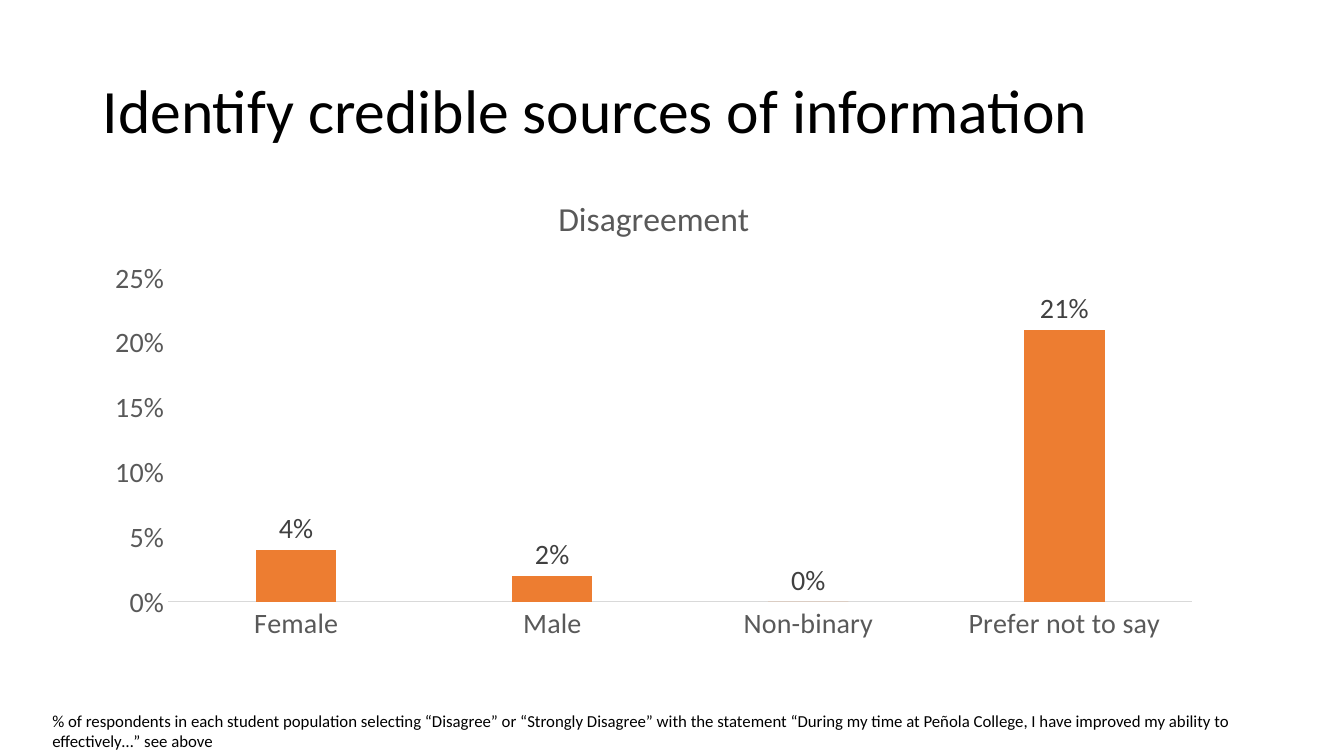
"""Builds the slide on disagreement with identifying credible sources."""
from pptx import Presentation
from pptx.chart.data import CategoryChartData
from pptx.dml.color import RGBColor
from pptx.enum.chart import XL_CHART_TYPE, XL_LABEL_POSITION, XL_TICK_MARK
from pptx.enum.text import MSO_ANCHOR
from pptx.util import Inches, Pt

COLUMNS = XL_CHART_TYPE.COLUMN_CLUSTERED
OUTSIDE_END = XL_LABEL_POSITION.OUTSIDE_END
NO_TICK = XL_TICK_MARK.NONE
TOP, MIDDLE = MSO_ANCHOR.TOP, MSO_ANCHOR.MIDDLE

BLACK = RGBColor(0x00, 0x00, 0x00)
DARK_GRAY = RGBColor(0x40, 0x40, 0x40)
GRAY = RGBColor(0x59, 0x59, 0x59)
LIGHT_GRAY = RGBColor(0xD9, 0xD9, 0xD9)
ORANGE = RGBColor(0xED, 0x7D, 0x31)


class SlideBuilder:
    """Holds the style and the current slide."""

    font_name = "Calibri"
    percent = "0%"

    def __init__(self, deck):
        self.slide = deck.slides.add_slide(deck.slide_layouts[6])

    def style(self, font, size, color):
        font.name = self.font_name
        font.size = Pt(size)
        font.bold = False
        font.color.rgb = color

    def text(self, box, words, size, anchor=TOP, spacing=1.0):
        frame = self.slide.shapes.add_textbox(*map(Inches, box)).text_frame
        frame.word_wrap = True
        frame.vertical_anchor = anchor
        paragraph = frame.paragraphs[0]
        paragraph.text = words
        paragraph.line_spacing = spacing
        self.style(paragraph.font, size, BLACK)

    def column_chart(self, box, title, shares):
        data = CategoryChartData(number_format=self.percent)
        data.categories = list(shares)
        data.add_series(title, list(shares.values()))
        chart = self.slide.shapes.add_chart(COLUMNS, *map(Inches, box), data).chart
        self.style(chart.font, 20, BLACK)
        chart.has_legend = False
        chart.has_title = True
        heading = chart.chart_title.text_frame
        heading.text = title
        self.style(heading.paragraphs[0].font, 24, GRAY)

        for axis in (chart.category_axis, chart.value_axis):
            axis.major_tick_mark = axis.minor_tick_mark = NO_TICK
            axis.has_major_gridlines = False
            self.style(axis.tick_labels.font, 20, GRAY)
        baseline = chart.category_axis.format.line
        baseline.color.rgb = LIGHT_GRAY
        baseline.width = Pt(0.75)
        scale = chart.value_axis
        scale.format.line.fill.background()
        scale.minimum_scale, scale.maximum_scale, scale.major_unit = 0, 0.25, 0.05
        scale.tick_labels.number_format = self.percent
        scale.tick_labels.number_format_is_linked = False

        plot = chart.plots[0]
        plot.gap_width, plot.overlap = 219, -27
        plot.vary_by_categories = False
        columns = plot.series[0]
        columns.format.fill.solid()
        columns.format.fill.fore_color.rgb = ORANGE
        labels = columns.data_labels
        labels.show_value = True
        labels.position = OUTSIDE_END
        labels.number_format = self.percent
        labels.number_format_is_linked = False
        self.style(labels.font, 20, DARK_GRAY)


def main():
    deck = Presentation()
    deck.slide_width, deck.slide_height = Inches(13.33), Inches(7.5)
    builder = SlideBuilder(deck)
    builder.text((0.92, 0.4, 11.5, 1.45), "Identify credible sources of information",
                 44, MIDDLE, 0.9)
    builder.text((0.42, 7, 12.49, 0.5),
                 "% of respondents in each student population selecting “Disagree” or "
                 "“Strongly Disagree” with the statement “During my time at Peñola College, "
                 "I have improved my ability to effectively…” see above", 12)
    builder.column_chart((0.92, 1.74, 11.13, 4.71), "Disagreement", {
        "Female": 0.04, "Male": 0.02, "Non-binary": 0, "Prefer not to say": 0.21})
    deck.save("out.pptx")


if __name__ == "__main__":
    main()
